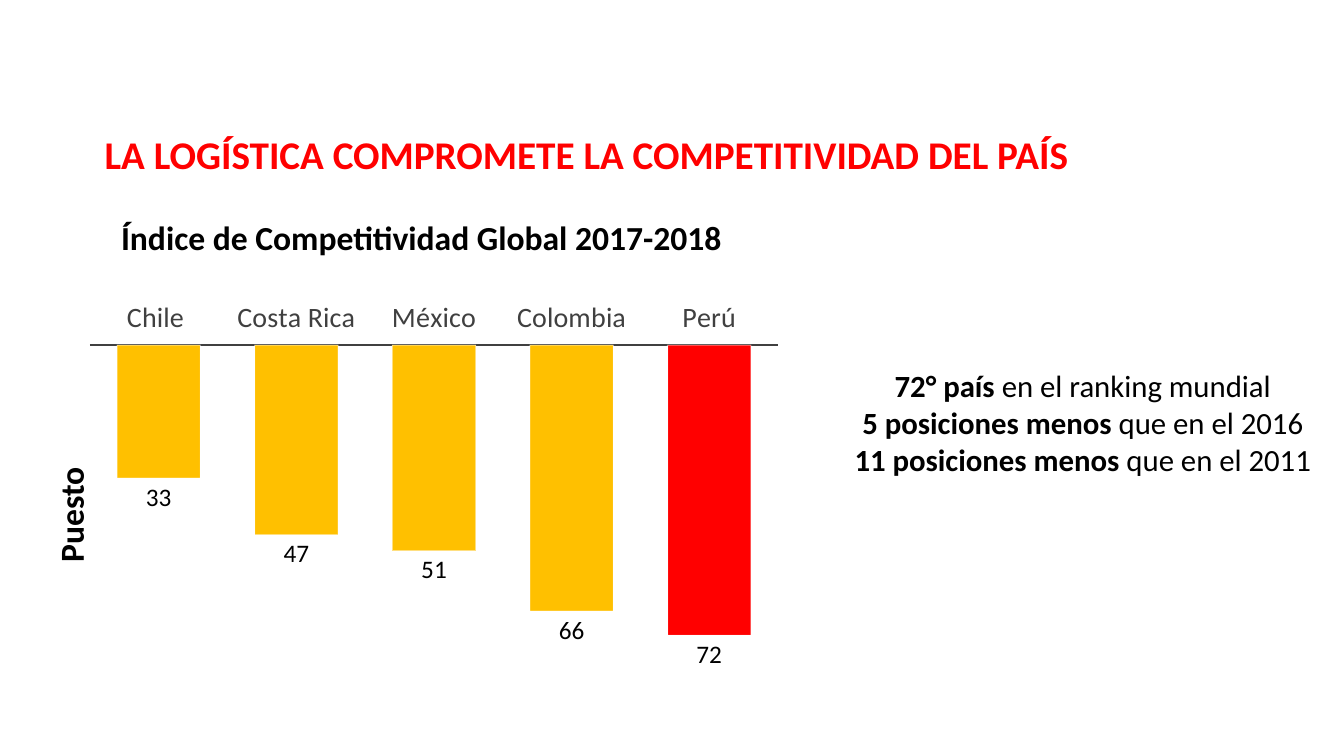
import pptx
import pptx.chart.data
import pptx.dml.color
import pptx.enum.chart
import pptx.enum.text
import pptx.oxml
import pptx.oxml.ns
import pptx.util
from pptx.util import Inches

COLORS = {"red": "FF0000", "gold": "FFC000", "black": "000000",
          "gray": "404040", "white": "FFFFFF"}
FONT = "Calibri"
CENTER = pptx.enum.text.PP_ALIGN.CENTER
LEFT = pptx.enum.text.PP_ALIGN.LEFT

# Content: each paragraph is a list of (text, bold) runs
TEXTS = [
    {"box": (0.94, 1.24, 10.17, 0.57), "size": 28, "color": "red", "align": LEFT,
     "paragraphs": [[("LA LOGÍSTICA COMPROMETE LA COMPETITIVIDAD DEL PAÍS", True)]]},
    {"box": (0.94, 2.1, 6.48, 0.5), "size": 24, "color": "black", "align": CENTER,
     "paragraphs": [[("Índice de Competitividad Global 2017-2018", True)]]},
    {"box": (8.37, 3.59, 4.74, 1.21), "size": 22, "color": "black", "align": CENTER,
     "paragraphs": [
         [("72° país ", True), ("en el ranking mundial", False)],
         [("5 posiciones menos ", True), ("que en el 2016", False)],
         [("11 posiciones menos ", True), ("que en el 2011", False)]]},
    {"box": (0.45, 4.34, 0.61, 1.53), "size": 24, "color": "black", "align": CENTER,
     "vertical": "vert270", "paragraphs": [[("Puesto", True)]]},
]
RANKING = {"Chile ": 33, "Costa Rica": 47, "México": 51, "Colombia": 66, "Perú": 72}
HIGHLIGHT = "Perú"
CHART_BOX = (0.75, 2.89, 7.11, 3.81)
PLOT_AREA = {"x": 0.02, "y": 0.14, "w": 0.96, "h": 0.84}


def rgb(name):
    return pptx.dml.color.RGBColor.from_string(COLORS[name])


def format_font(font, size, color, bold=False):
    values = {"name": FONT, "size": pptx.util.Pt(size), "bold": bold}
    for attribute, value in values.items():
        setattr(font, attribute, value)
    font.color.rgb = rgb(color)


def add_text(slide, item):
    shape = slide.shapes.add_textbox(*map(Inches, item["box"]))
    frame = shape.text_frame
    frame.word_wrap = True
    if "vertical" in item:
        frame._txBody.bodyPr.set("vert", item["vertical"])
    for index, runs in enumerate(item["paragraphs"]):
        paragraph = frame.add_paragraph() if index else frame.paragraphs[0]
        paragraph.alignment = item["align"]
        for text, bold in runs:
            run = paragraph.add_run()
            run.text = text
            format_font(run.font, item["size"], item["color"], bold)


def style_bar(bar_format, color):
    bar_format.fill.solid()
    bar_format.fill.fore_color.rgb = rgb(color)
    line = bar_format.line
    line.width = pptx.util.Pt(0.75)
    line.color.rgb = rgb("white")
    # Half-transparent outline
    white = line._ln.find(".//" + pptx.oxml.ns.qn("a:srgbClr"))
    white.append(pptx.oxml.parse_xml(
        f'<a:alpha {pptx.oxml.ns.nsdecls("a")} val="50000"/>'))


def add_ranking_chart(slide):
    # Ranks hang below the axis, so they are plotted as negatives
    data = pptx.chart.data.CategoryChartData()
    data.categories = list(RANKING)
    data.add_series("Series 1", [-rank for rank in RANKING.values()])
    chart = slide.shapes.add_chart(
        pptx.enum.chart.XL_CHART_TYPE.COLUMN_CLUSTERED,
        *map(Inches, CHART_BOX), data).chart
    chart.has_title = False
    chart.has_legend = False
    format_font(chart.font, 10, "black")

    # Bars
    plot = chart.plots[0]
    plot.gap_width = 65
    plot.vary_by_categories = False
    series = plot.series[0]
    series.invert_if_negative = False
    style_bar(series.format, "gold")
    style_bar(series.points[list(RANKING).index(HIGHLIGHT)].format, "red")

    # Value labels, shown without the minus sign
    labels = series.data_labels
    label_values = {"show_value": True, "number_format": "0;0",
                    "number_format_is_linked": False,
                    "position": pptx.enum.chart.XL_LABEL_POSITION.OUTSIDE_END}
    for attribute, value in label_values.items():
        setattr(labels, attribute, value)
    format_font(labels.font, 18, "black")

    # Axes
    category_axis, value_axis = chart.category_axis, chart.value_axis
    no_tick = pptx.enum.chart.XL_TICK_MARK.NONE
    category_values = {"major_tick_mark": no_tick, "minor_tick_mark": no_tick,
                       "tick_label_position": pptx.enum.chart.XL_TICK_LABEL_POSITION.HIGH}
    value_values = {"minimum_scale": -80, "maximum_scale": 0,
                    "has_major_gridlines": False, "visible": False}
    for axis, values in ((category_axis, category_values), (value_axis, value_values)):
        for attribute, value in values.items():
            setattr(axis, attribute, value)
    format_font(category_axis.tick_labels.font, 20, "gray")
    category_axis.format.line.color.rgb = rgb("gray")
    category_axis.format.line.width = pptx.util.Pt(1.5)

    # Fixed plot area
    plot_area = chart._chartSpace.chart.plotArea
    for layout in plot_area.findall(pptx.oxml.ns.qn("c:layout")):
        plot_area.remove(layout)
    sizes = "".join(f'<c:{key} val="{value}"/>' for key, value in PLOT_AREA.items())
    plot_area.insert(0, pptx.oxml.parse_xml(
        f'<c:layout {pptx.oxml.ns.nsdecls("c")}><c:manualLayout>'
        '<c:layoutTarget val="inner"/><c:xMode val="edge"/><c:yMode val="edge"/>'
        f'{sizes}</c:manualLayout></c:layout>'))


def main():
    presentation = pptx.Presentation()
    presentation.slide_width = Inches(13.33)
    presentation.slide_height = Inches(7.5)
    slide = presentation.slides.add_slide(presentation.slide_layouts[6])
    add_ranking_chart(slide)
    for item in TEXTS:
        add_text(slide, item)
    presentation.save("out.pptx")


if __name__ == "__main__":
    main()
